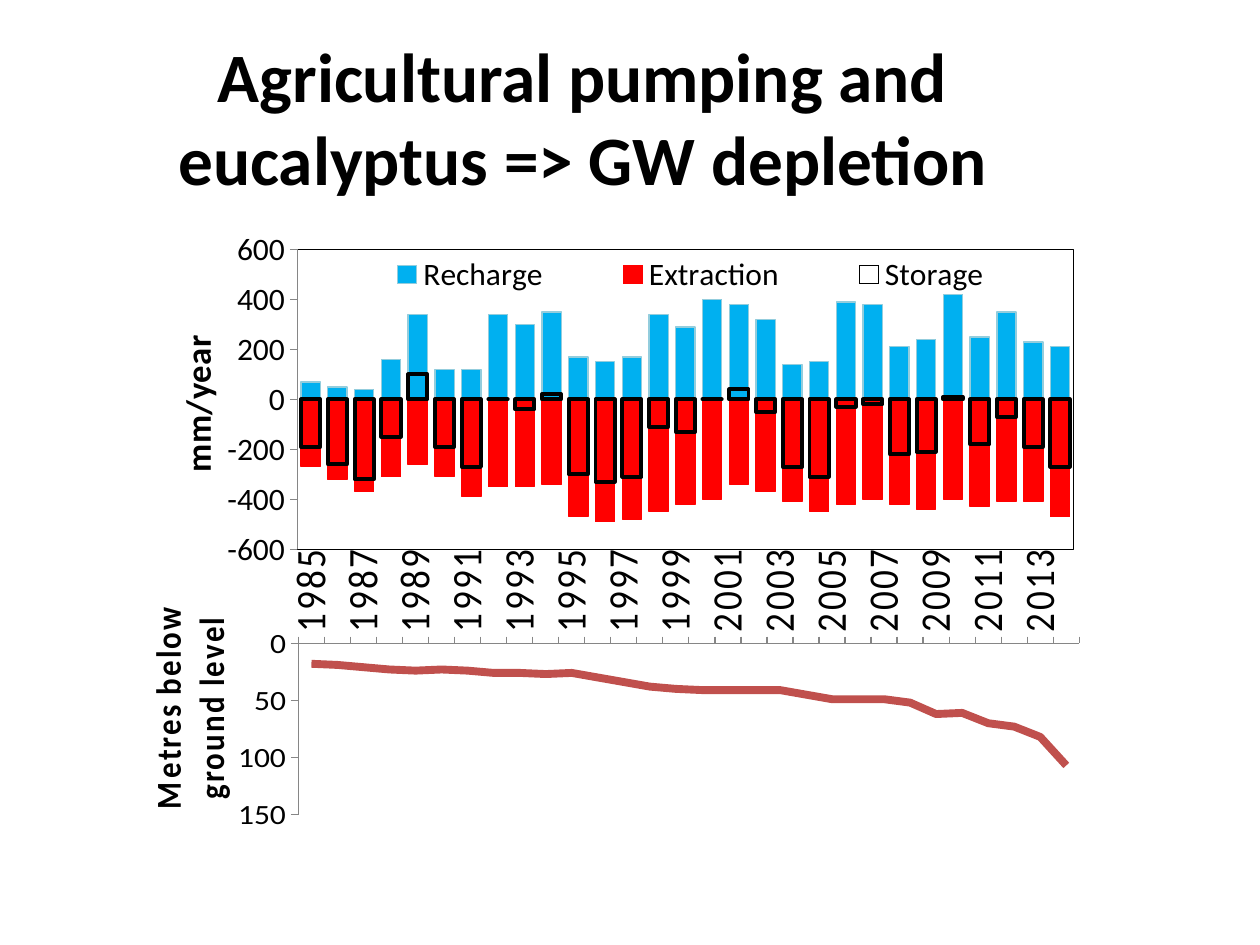
"""Build a slide with a water balance column chart above a groundwater level line chart."""
from lxml.etree import SubElement
from pptx import Presentation
from pptx.chart.data import CategoryChartData
from pptx.dml.color import RGBColor
from pptx.enum.chart import XL_CHART_TYPE as CT, XL_LEGEND_POSITION as LP
from pptx.enum.chart import XL_TICK_LABEL_POSITION as TLP, XL_TICK_MARK as TM
from pptx.enum.text import MSO_ANCHOR, PP_ALIGN
from pptx.oxml import parse_xml
from pptx.oxml.ns import nsdecls, qn
from pptx.util import Inches, Pt

rgb = RGBColor.from_string


def write(tf, text, size=20, bold=True, color="000000", align=PP_ALIGN.CENTER):
    p = tf.paragraphs[0]
    p.alignment = align
    r = p.add_run()
    r.text = text
    r.font.name = "Calibri"
    r.font.size = Pt(size)
    r.font.bold = bold
    r.font.color.rgb = rgb(color)


def place(el, inner=False, **box):
    for old in el.findall(qn("c:layout")):
        el.remove(old)
    target = '<c:layoutTarget val="inner"/>' if inner else ""
    modes = "".join(f'<c:{k}Mode val="edge"/>' for k in box if k in "xy")
    sizes = "".join(f'<c:{k} val="{v}"/>' for k, v in box.items())
    layout = parse_xml(f'<c:layout {nsdecls("c")}><c:manualLayout>{target}{modes}{sizes}'
                       '</c:manualLayout></c:layout>')
    overlay = el.find(qn("c:overlay"))
    if overlay is None:
        el.insert(0, layout)
    else:
        overlay.addprevious(layout)


prs = Presentation()
prs.slide_width, prs.slide_height = Inches(10), Inches(7.5)
s = prs.slides.add_slide(prs.slide_layouts[6])

sp = s.shapes.add_textbox(Inches(0.5), Inches(0.3), Inches(8.25), Inches(1.25))
tf = sp.text_frame
tf.word_wrap = True
tf.vertical_anchor = MSO_ANCHOR.MIDDLE
write(tf, "Agricultural pumping and eucalyptus => GW depletion", size=39.6)

balance = CategoryChartData()
balance.categories = [str(n) for n in range(1, 30)]
balance.add_series("Recharge", [
    70, 50, 40, 160, 340, 120, 120, 340, 300, 350, 170, 150, 170, 340, 290,
    400, 380, 320, 140, 150, 390, 380, 210, 240, 420, 250, 350, 230, 210])
balance.add_series("Extraction", [
    -270, -320, -370, -310, -260, -310, -390, -350, -350, -340, -470, -490, -480, -450, -420,
    -400, -340, -370, -410, -450, -420, -400, -420, -440, -400, -430, -410, -410, -470])
balance.add_series("Storage", [
    -190, -260, -320, -150, 100, -190, -270, 0, -40, 20, -300, -330, -310, -110, -130,
    0, 40, -50, -270, -310, -30, -20, -220, -210, 10, -180, -70, -190, -270])

level = CategoryChartData()
level.categories = [str(year) for year in range(1985, 2015)]
level.add_series("Series 1", [
    18, 19, 21, 23, 24, 23, 24, 26, 26, 27, 26, 30, 34, 38, 40,
    41, 41, 41, 41, 45, 49, 49, 49, 52, 62, 61, 70, 73, 82, 107])

charts = []
for kind, data, top, width, title, spot, plot, scale in [
    (CT.COLUMN_CLUSTERED, balance, 1.83, 8, "mm/year", (0.04, 0.25),
     (0.17, 0.04, 0.77, 0.78), (-600, 600, 200)),
    (CT.LINE, level, 4.42, 8.05, "Metres below ground level", (0.01, 0.06),
     (0.17, 0.12, 0.77, 0.5), (0, 150, 50)),
]:
    chart = s.shapes.add_chart(kind, Inches(1), Inches(top), Inches(width), Inches(3.08), data).chart
    chart.has_title = chart.has_legend = False
    chart.font.name, chart.font.size = "Calibri", Pt(10)
    chart.font.color.rgb = rgb("000000")
    chart.plots[0].vary_by_categories = False
    place(chart.element.chart.plotArea, inner=True, **dict(zip("xywh", plot)))
    axis = chart.value_axis
    axis.has_major_gridlines = False
    axis.minimum_scale, axis.maximum_scale, axis.major_unit = scale
    axis.major_tick_mark = TM.OUTSIDE
    axis.tick_labels.font.size = Pt(18)
    axis.tick_labels.number_format = "0"
    axis.tick_labels.number_format_is_linked = False
    write(axis.axis_title.text_frame, title)
    place(axis.axis_title.element if hasattr(axis.axis_title, "element") else axis.axis_title._element,
          **dict(zip("xy", spot)))
    axis.format.line.color.rgb = rgb("868686")
    charts.append(chart)

columns, line = charts
columns.category_axis.visible = False
columns.plots[0].gap_width, columns.plots[0].overlap = 39, 100
styles = [("00B0F0", "93CDDD", 0.75), ("FF0000", "FF0000", 0.75), (None, "000000", 2.25)]
for series, (fill, border, weight) in zip(columns.series, styles):
    series.invert_if_negative = False
    if fill:
        series.format.fill.solid()
        series.format.fill.fore_color.rgb = rgb(fill)
    else:
        series.format.fill.background()
    series.format.line.color.rgb = rgb(border)
    series.format.line.width = Pt(weight)
columns.element.chart.plotArea.append(parse_xml(
    f'<c:spPr {nsdecls("c", "a")}><a:noFill/><a:ln w="9525"><a:solidFill>'
    '<a:srgbClr val="000000"/></a:solidFill></a:ln></c:spPr>'))
columns.has_legend = True
legend = columns.legend
legend.position = LP.RIGHT
legend.include_in_layout = False
legend.font.size = Pt(18)
place(legend._element, x=0.2, y=0.05, w=0.72, h=0.11)

axis = line.category_axis
axis.tick_label_position = TLP.LOW
axis.major_tick_mark = TM.OUTSIDE
axis.tick_labels.font.size = Pt(24)
axis.format.line.color.rgb = rgb("868686")
ax = axis._element
ax.find(qn("c:txPr")).find(qn("a:bodyPr")).set("rot", "-5400000")
skip = SubElement(ax, qn("c:tickLblSkip"))
skip.set("val", "2")
ax.find(qn("c:noMultiLvlLbl")).addprevious(skip)
line.value_axis.reverse_order = True
series = line.series[0]
series.smooth = False
series.format.line.color.rgb = rgb("C0504D")
series.format.line.width = Pt(4.5)

prs.save("out.pptx")
